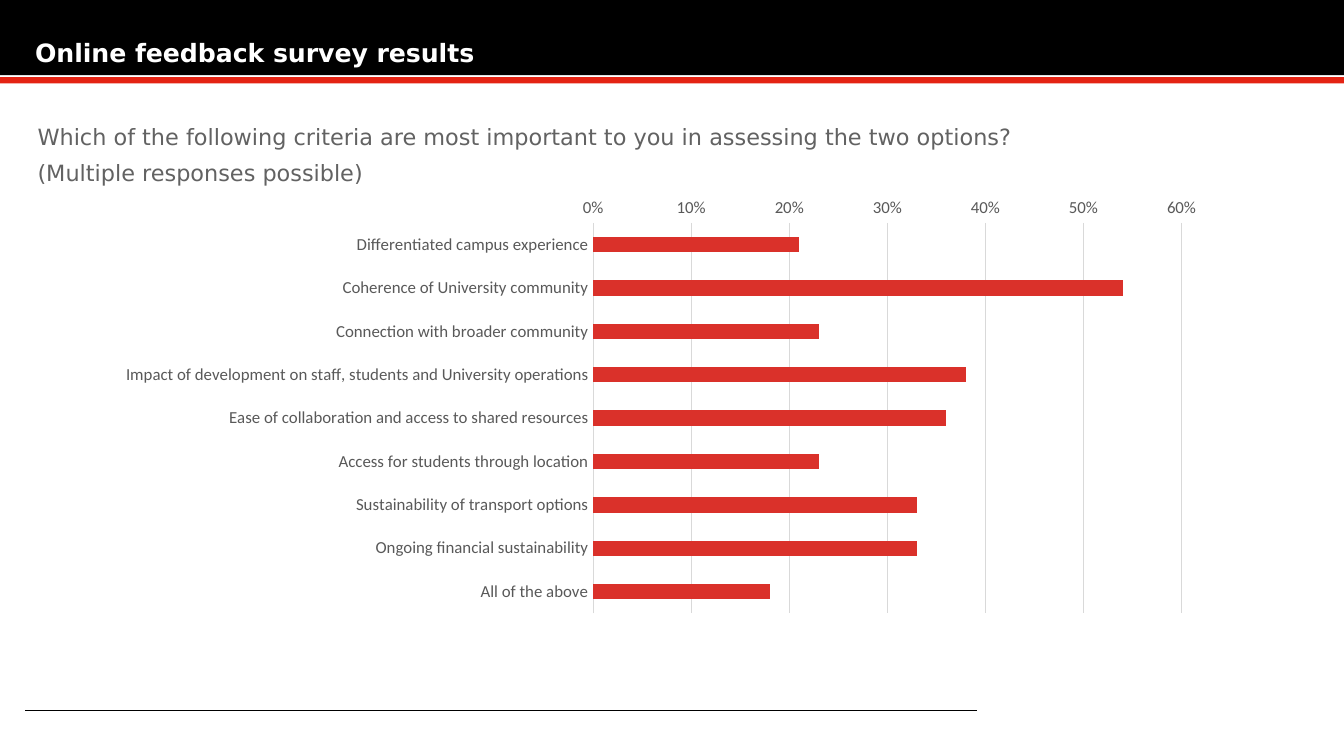
from lxml import etree
from pptx import Presentation
from pptx import util as u
from pptx.chart.data import CategoryChartData
from pptx.dml.color import RGBColor
from pptx.enum import chart as ch, shapes, text
from pptx.oxml import ns

BLACK = RGBColor(0x00, 0x00, 0x00)
WHITE = RGBColor(0xFF, 0xFF, 0xFF)
BAND_RED = RGBColor(0xE4, 0x23, 0x13)
BAR_RED = RGBColor(0xDA, 0x31, 0x2A)
QUESTION_GREY = RGBColor(0x62, 0x62, 0x62)
LABEL_GREY = RGBColor(0x59, 0x59, 0x59)
GRID_GREY = RGBColor(0xD9, 0xD9, 0xD9)
HEADING_FONT = "DejaVu Sans"
CHART_FONT = "Calibri"


def style(font, name, size, color):
    font.name = name
    font.size = u.Pt(size)
    font.color.rgb = color


prs = Presentation()
prs.slide_width = u.Cm(25.4)
prs.slide_height = u.Cm(14.29)
slide = prs.slides.add_slide(prs.slide_layouts[5])

for top, height, color in [(0, 1.42, BLACK), (1.46, 0.12, BAND_RED)]:
    band = slide.shapes.add_shape(
        shapes.MSO_SHAPE.RECTANGLE, 0, u.Cm(top), prs.slide_width, u.Cm(height))
    band.shadow.inherit = False
    band.fill.solid()
    band.fill.fore_color.rgb = color
    band.line.fill.background()

footer_rule = slide.shapes.add_connector(
    shapes.MSO_CONNECTOR.STRAIGHT, u.Cm(0.48), u.Cm(13.43), u.Cm(18.46), u.Cm(13.43))
footer_rule.line.color.rgb = BLACK
footer_rule.line.width = u.Pt(0.75)
etree.SubElement(footer_rule._element.spPr, ns.qn("a:effectLst"))

title = slide.shapes.title
title.left, title.top, title.width, title.height = u.Cm(0.41), u.Cm(0.46), u.Cm(22.86), u.Cm(0.96)
title.text_frame.text = "Online feedback survey results"
title.text_frame.vertical_anchor = text.MSO_ANCHOR.BOTTOM
heading = title.text_frame.paragraphs[0]
heading.alignment = text.PP_ALIGN.LEFT
heading.line_spacing = 0.9
style(heading.font, HEADING_FONT, 13.5, WHITE)
heading.font.bold = True
slide.shapes._spTree.append(title._element)

question = slide.shapes.add_textbox(u.Cm(0.46), u.Cm(2.31), u.Cm(21.92), u.Cm(1.4)).text_frame
question.word_wrap = True
question.text = (
    "Which of the following criteria are most important to you in assessing the two options?\n"
    "(Multiple responses possible)")
for paragraph in question.paragraphs:
    paragraph.line_spacing = 0.8
    style(paragraph.font, HEADING_FONT, 12, QUESTION_GREY)
question.paragraphs[1].space_before = u.Pt(7.5)

responses = {
    "Differentiated campus experience": 0.21,
    "Coherence of University community": 0.54,
    "Connection with broader community": 0.23,
    "Impact of development on staff, students and University operations": 0.38,
    "Ease of collaboration and access to shared resources": 0.36,
    "Access for students through location": 0.23,
    "Sustainability of transport options": 0.33,
    "Ongoing financial sustainability": 0.33,
    "All of the above": 0.18,
}
survey = CategoryChartData(number_format="0%")
survey.categories = list(responses)
survey.add_series("Series 1", list(responses.values()))
chart = slide.shapes.add_chart(
    ch.XL_CHART_TYPE.BAR_CLUSTERED, u.Cm(1.98), u.Cm(3.56), u.Cm(20.98), u.Cm(8.2), survey).chart
chart.has_legend = False
chart.has_title = False
style(chart.font, CHART_FONT, 10, BLACK)

bars = chart.plots[0]
bars.gap_width = 182
bars.vary_by_categories = False
bars.series[0].format.fill.solid()
bars.series[0].format.fill.fore_color.rgb = BAR_RED

criteria, share = chart.category_axis, chart.value_axis
for axis in (criteria, share):
    axis.major_tick_mark = ch.XL_TICK_MARK.NONE
    axis.minor_tick_mark = ch.XL_TICK_MARK.NONE
    style(axis.tick_labels.font, CHART_FONT, 9, LABEL_GREY)
criteria.reverse_order = True
share.minimum_scale, share.maximum_scale, share.major_unit = 0, 0.6, 0.1
share.tick_labels.number_format = "0%"
share.tick_labels.number_format_is_linked = False
share.format.line.fill.background()
share.has_major_gridlines = True
for line in (criteria.format.line, share.major_gridlines.format.line):
    line.color.rgb = GRID_GREY
    line.width = u.Pt(0.75)

plot_area = chart._chartSpace.chart.plotArea
for automatic in plot_area.findall(ns.qn("c:layout")):
    plot_area.remove(automatic)
layout = etree.Element(ns.qn("c:layout"))
plot_area.insert(0, layout)
manual = etree.SubElement(layout, ns.qn("c:manualLayout"))
for tag, value in [("layoutTarget", "inner"), ("xMode", "edge"), ("yMode", "edge"),
                   ("x", "0.44"), ("y", "0.08"), ("w", "0.53"), ("h", "0.9")]:
    etree.SubElement(manual, ns.qn("c:" + tag)).set("val", value)

prs.save("out.pptx")
